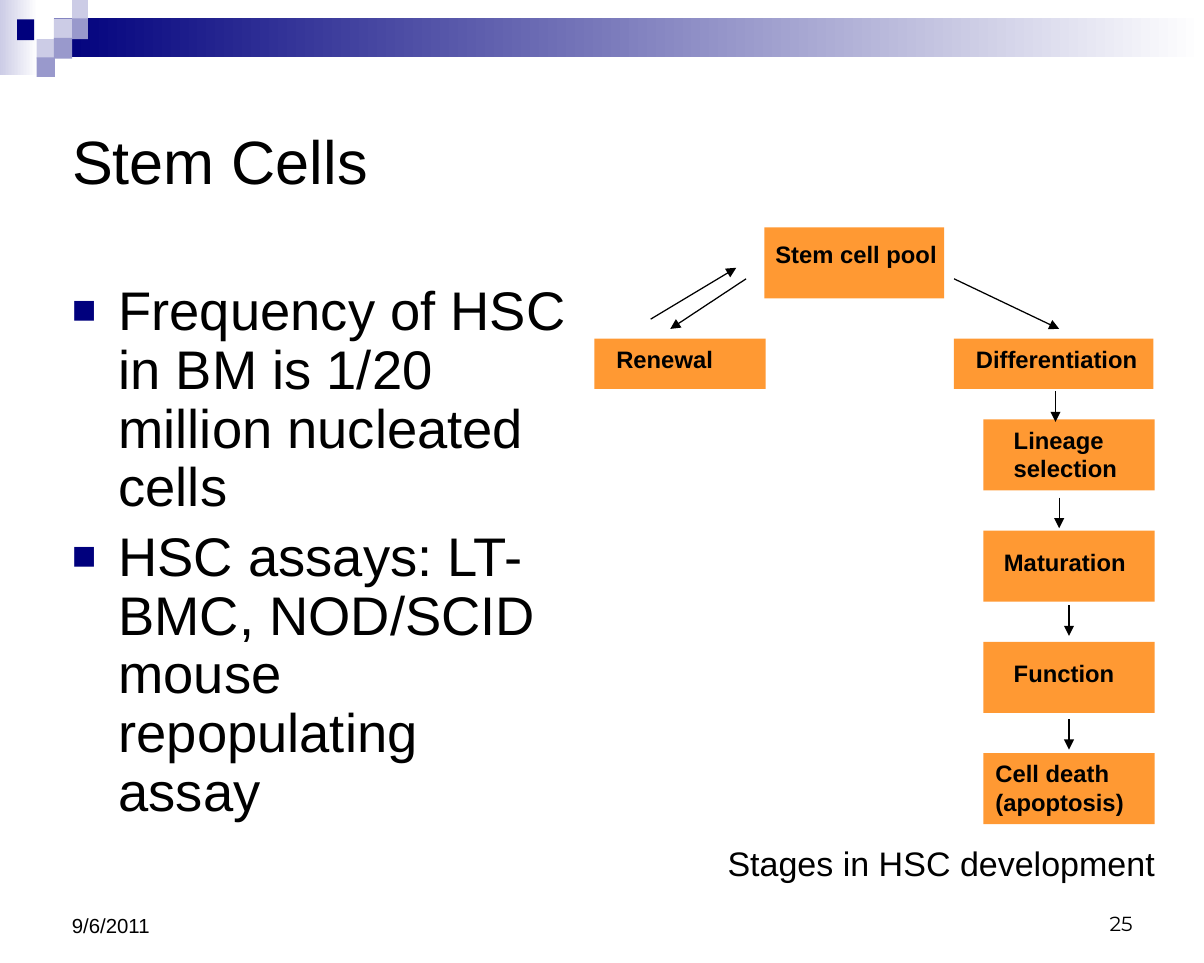
"""Build the stem cell slide with its flow of stages."""
from lxml import etree
from pptx import Presentation
from pptx.dml.color import RGBColor
from pptx.enum.shapes import MSO_CONNECTOR, MSO_SHAPE
from pptx.enum.text import MSO_ANCHOR, PP_ALIGN
from pptx.oxml.ns import qn
from pptx.util import Inches, Pt

RECT = MSO_SHAPE.RECTANGLE
LINE = MSO_CONNECTOR.STRAIGHT
TOP, MID, LOW = MSO_ANCHOR.TOP, MSO_ANCHOR.MIDDLE, MSO_ANCHOR.BOTTOM
LEFT, RIGHT = PP_ALIGN.LEFT, PP_ALIGN.RIGHT
NAVY, LILAC, MAUVE = "00007D", "CCCCE6", "9999CC"
WHITE, BLACK, AMBER = "FFFFFF", "000000", "FF9933"

color = RGBColor.from_string


def block(place, *hues):
    """Add a plain rectangle, with a gradient if two hues are given."""
    box = shapes.add_shape(RECT, *map(Inches, place))
    box.shadow.inherit = False
    box.line.fill.background()
    if len(hues) == 1:
        box.fill.solid()
        box.fill.fore_color.rgb = color(hues[0])
        return
    box.fill.gradient()
    box.fill.gradient_angle = 0
    for stop, hue, spot in zip(box.fill.gradient_stops, hues, (0, 1)):
        stop.color.rgb = color(hue)
        stop.position = spot


def write(box, lines, size, anchor=TOP, align=LEFT, name="Arial", bold=False):
    """Fill a text frame with evenly styled paragraphs."""
    frame = box.text_frame
    frame.word_wrap = True
    frame.vertical_anchor = anchor
    frame.text = "\n".join(lines)
    look = {"size": Pt(size), "name": name, "bold": bold}
    for para in frame.paragraphs:
        para.alignment = align
        font = para.runs[0].font
        font.color.rgb = color(BLACK)
        for key, value in look.items():
            setattr(font, key, value)
    return frame


deck = Presentation()
deck.slide_width, deck.slide_height = Inches(315 / 32), Inches(63 / 8)
slide = deck.slides.add_slide(deck.slide_layouts[5])
shapes = slide.shapes

block((0, 0, 0.31, 0.61), LILAC, WHITE)
block((0.44, 0.15, 9.4, 0.32), NAVY, WHITE)
tiles = [
    (0.44, 0.15, 0.15, 0.17, LILAC),
    (0.59, 0, 0.13, 0.16, LILAC),
    (0.59, 0.15, 0.13, 0.17, MAUVE),
    (0.3, 0.32, 0.15, 0.16, LILAC),
    (0.14, 0.16, 0.14, 0.17, NAVY),
    (0.44, 0.31, 0.15, 0.17, MAUVE),
    (0.3, 0.47, 0.15, 0.16, MAUVE),
]
for *place, hue in tiles:
    block(place, hue)

title = shapes.title
spot = {"left": 0.49, "top": 0.52, "width": 8.86, "height": 1.58}
for key, value in spot.items():
    setattr(title, key, Inches(value))
write(title, ["Stem Cells"], 36, MID)

points = [
    "Frequency of HSC in BM is 1/20 million nucleated cells",
    "HSC assays: LT-BMC, NOD/SCID mouse repopulating assay",
]
body = shapes.add_textbox(*map(Inches, (0.49, 2.27, 4.28, 4.46)))
for order, para in enumerate(write(body, points, 32).paragraphs):
    para.line_spacing = 0.9
    para.space_before = Pt(6.4 * order)
    props = para._p.get_or_add_pPr()
    props.set("marL", str(Inches(0.38)))
    props.set("indent", str(Inches(-0.38)))
    tint = etree.SubElement(props, qn("a:buClr"))
    etree.SubElement(tint, qn("a:srgbClr"), val=NAVY)
    etree.SubElement(props, qn("a:buSzPct"), val="75000")
    etree.SubElement(props, qn("a:buFont"), typeface="Arial")
    etree.SubElement(props, qn("a:buChar"), char="■")

stages = [
    ("Stem cell pool", (6.25, 1.86, 1.47, 0.58), (6.24, 1.91, 1.78, 0.33)),
    ("Differentiation", (7.8, 2.77, 1.63, 0.41), (7.88, 2.77, 1.78, 0.33)),
    ("Renewal", (4.86, 2.77, 1.4, 0.41), (4.94, 2.77, 1.55, 0.33)),
]
steps = [
    ("Lineage selection", (8.19, 3.43, 1.47, 0.57)),
    ("Maturation", (8.11, 4.43, 1.47, 0.33)),
    ("Function", (8.19, 5.34, 1.24, 0.33)),
    ("Cell death (apoptosis)", (8.04, 6.16, 1.47, 0.57)),
]
for row, (label, place) in enumerate(steps):
    stages.append((label, (8.04, 3.43 + 0.91 * row, 1.4, 0.58), place))
for label, frame, place in stages:
    block(frame, AMBER)
    write(shapes.add_textbox(*map(Inches, place)), [label], 14, bold=True)

arrows = [
    (7.8, 2.28, 8.66, 2.69),
    (6.1, 2.28, 5.48, 2.69),
    (5.32, 2.61, 6.02, 2.19),
]
for x, y in ((8.63, 3.2), (8.66, 4.07), (8.74, 4.95), (8.74, 5.88)):
    arrows.append((x, y, x, y + 0.25))
for ends in arrows:
    arrow = shapes.add_connector(LINE, *map(Inches, ends))
    arrow.line.width = Pt(0.75)
    arrow.line.color.rgb = color(BLACK)
    stroke = arrow.line._get_or_add_ln()
    etree.SubElement(stroke, qn("a:tailEnd"), type="triangle")
    etree.SubElement(arrow._element.spPr, qn("a:effectLst"))

notes = [
    ("Stages in HSC development", (5.85, 6.84, 3.72, 0.43), 20, TOP, LEFT, "Arial"),
    ("25", (7.06, 7.18, 2.3, 0.52), 12, LOW, RIGHT, "Montserrat"),
    ("9/6/2011", (0.49, 7.17, 2.3, 0.55), 12, LOW, LEFT, "Arial"),
]
for label, place, *style in notes:
    write(shapes.add_textbox(*map(Inches, place)), [label], *style)

deck.save("out.pptx")
